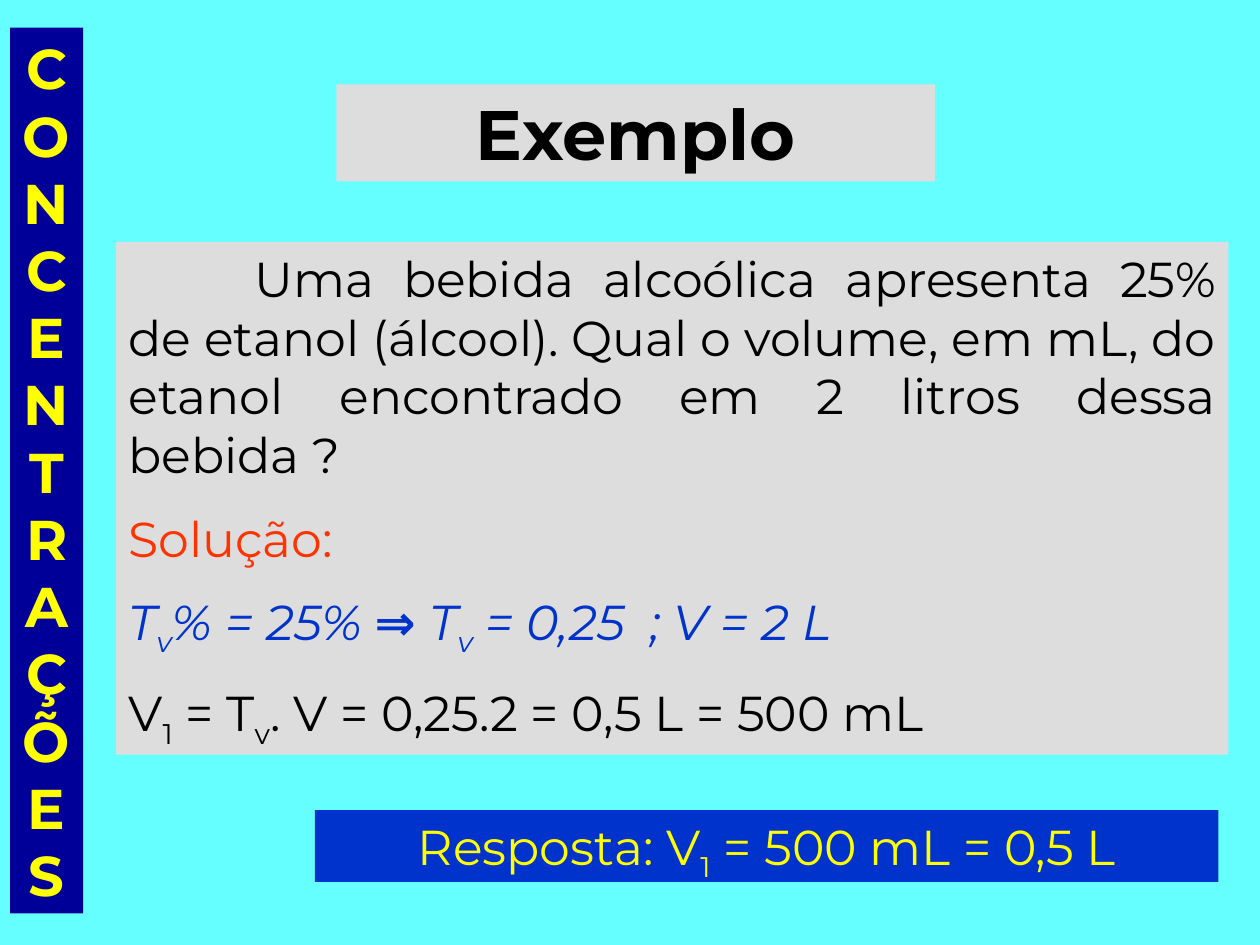
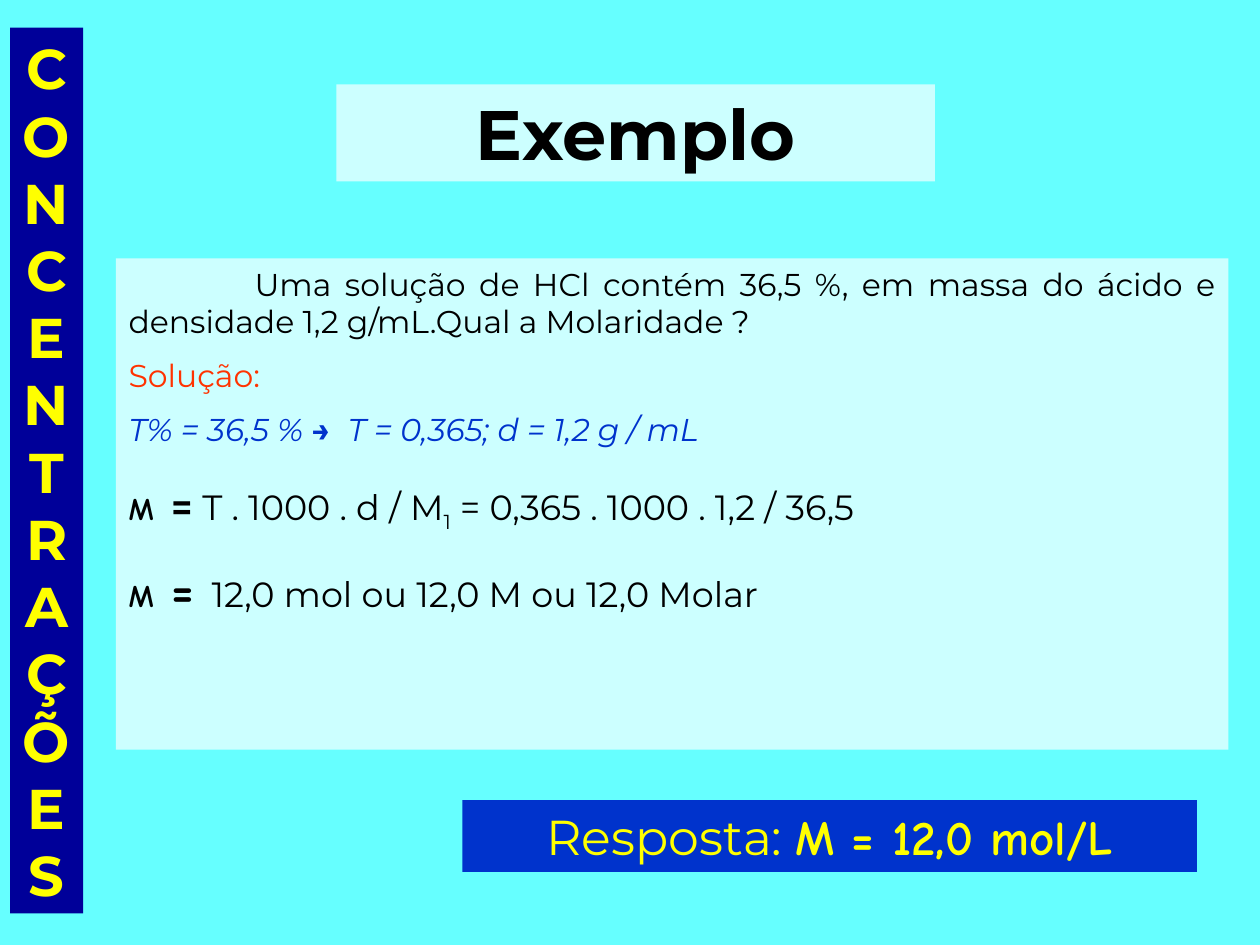
"""Build two worked examples about concentrations."""
import pptx
import pptx.util
import pptx.dml.color
import pptx.enum.shapes
import pptx.enum.text
import pptx.oxml.ns

Inches, Pt = pptx.util.Inches, pptx.util.Pt
RGBColor = pptx.dml.color.RGBColor
ALIGN = pptx.enum.text.PP_ALIGN

CYAN = RGBColor(0x66, 0xFF, 0xFF)
NAVY = RGBColor(0x00, 0x00, 0x99)
BLUE = RGBColor(0x00, 0x33, 0xCC)
GREY = RGBColor(0xDD, 0xDD, 0xDD)
PALE = RGBColor(0xCC, 0xFF, 0xFF)
RED = RGBColor(0xFF, 0x33, 0x00)
YELLOW = RGBColor(0xFF, 0xFF, 0x00)
BLACK = RGBColor(0x00, 0x00, 0x00)

FONT = "Montserrat"
COMIC = {"name": "Comic Neue", "bold": True}
BOLD = {"bold": True}
SUB = {"sub": True}


def add_run(para, text, name=None, size=None, bold=None, italic=None, sub=False):
    """Add a run that holds only what differs from its paragraph."""
    run = para.add_run()
    run.text = text
    font = run.font
    if name:
        font.name = name
    if size:
        font.size = Pt(size)
    if bold is not None:
        font.bold = bold
    if italic is not None:
        font.italic = italic
    if sub:
        run._r.get_or_add_rPr().set("baseline", "-25000")


def fill_line(para, runs, size, color, align, bold=False, italic=False, indent=0):
    """Format a paragraph without bullet and add its runs."""
    para.alignment = align
    para.line_spacing = 1.0
    largest = max(style.get("size", size) for _, style in runs)
    para.space_before = Pt(largest / 2)
    font = para.font
    font.name, font.size, font.color.rgb = FONT, Pt(size), color
    font.bold, font.italic = bold, italic
    props = para._p.get_or_add_pPr()
    props.set("marL", "0")
    props.set("indent", str(Inches(indent)))
    bullet = props.makeelement(pptx.oxml.ns.qn("a:buNone"), {})
    props.find(pptx.oxml.ns.qn("a:defRPr")).addprevious(bullet)
    for text, style in runs:
        add_run(para, text, **style)


def style_box(shape, place, color):
    """Place a shape, fill it and let its text start at the top."""
    shape.left, shape.top, shape.width, shape.height = map(Inches, place)
    shape.fill.solid()
    shape.fill.fore_color.rgb = color
    shape.line.fill.background()
    frame = shape.text_frame
    frame.word_wrap = True
    frame.auto_size = pptx.enum.text.MSO_AUTO_SIZE.NONE
    frame.vertical_anchor = pptx.enum.text.MSO_ANCHOR.TOP
    return frame


def add_box(slide, place, color, runs, size, bold=False):
    """Add a filled box with one centred yellow line."""
    kind = pptx.enum.shapes.MSO_SHAPE.RECTANGLE
    shape = slide.shapes.add_shape(kind, *map(Inches, place))
    shape.shadow.inherit = False
    frame = style_box(shape, place, color)
    fill_line(frame.paragraphs[0], runs, size, YELLOW, ALIGN.CENTER, bold)


def add_lines(frame, lines, size):
    """Write the justified lines of a worked example."""
    for index, (runs, style) in enumerate(lines):
        para = frame.add_paragraph() if index else frame.paragraphs[0]
        fill_line(para, runs, **{"size": size, "color": BLACK,
                                 "align": ALIGN.JUSTIFY, **style})


def add_slide(deck, panel, place, size, lines, answer, reply):
    """Add an example with side band, title, body and answer."""
    slide = deck.slides.add_slide(deck.slide_layouts[1])
    add_box(slide, (0.08, 0.22, 0.58, 7.03), NAVY,
            [("CONCENTRAÇÕES", {})], 32, True)
    title = style_box(slide.shapes.title, (2.67, 0.67, 4.75, 0.77), panel)
    fill_line(title.paragraphs[0], [("Exemplo", {})], 40, BLACK,
              ALIGN.CENTER, True)
    add_lines(style_box(slide.placeholders[1], place, panel), lines, size)
    add_box(slide, answer, BLUE, reply, 28)


def main():
    """Build and save the deck."""
    deck = pptx.Presentation()
    deck.slide_width, deck.slide_height = Inches(10), Inches(7.5)
    back = deck.slide_master.background.fill
    back.solid()
    back.fore_color.rgb = CYAN

    given = {"color": BLUE, "italic": True}
    arrow = {"bold": True, "italic": False}
    solve = ([("Solução:", {})], {"color": RED})

    drink = [
        ([("Uma bebida alcoólica apresenta 25% de etanol (álcool). "
           "Qual o volume, em mL, do etanol encontrado em 2 litros "
           "dessa bebida ?", {})], {"indent": 1}),
        solve,
        ([("T", {}), ("v", SUB), ("% = 25% ", {}), ("⇒ ", arrow),
          ("T", {}), ("v", SUB), (" = 0,25  ; V = 2 L", {})], given),
        ([("V", {}), ("1", SUB), (" = T", {}), ("v", SUB),
          (". V = 0,25.2 = 0,5 L = 500 mL", {})], {}),
    ]
    add_slide(deck, GREY, (0.92, 1.92, 8.83, 4.07), 28, drink,
              (2.5, 6.43, 7.17, 0.57),
              [("Resposta: V", {}), ("1", SUB), (" = 500 mL = 0,5 L", {})])

    large = {**COMIC, "size": 28}
    small = {**COMIC, "size": 18}
    acid = [
        ([("Uma solução de HCl contém 36,5 %, em massa do ácido e "
           "densidade 1,2 g/mL.Qual a Molaridade ?", {})], {"indent": 1}),
        solve,
        ([("T% = 36,5 % ", {}), ("→ ", arrow),
          (" T = 0,365; d = 1,2 g / mL", {})], given),
        ([("M", small), (" ", large), ("= ", BOLD),
          ("T . 1000 . d / M", {}), ("1", SUB),
          (" = 0,365 . 1000 . 1,2 / 36,5", {})], {"size": 20}),
        ([("M", small), (" = ", large),
          ("12,0 mol ou 12,0 M ou 12,0 Molar", {})], {"size": 20}),
    ]
    add_slide(deck, PALE, (0.92, 2.05, 8.83, 3.9), 18, acid,
              (3.67, 6.35, 5.83, 0.57),
              [("Resposta: ", {}), ("M = 12,0 mol/L", COMIC)])
    deck.save("out.pptx")


if __name__ == "__main__":
    main()
